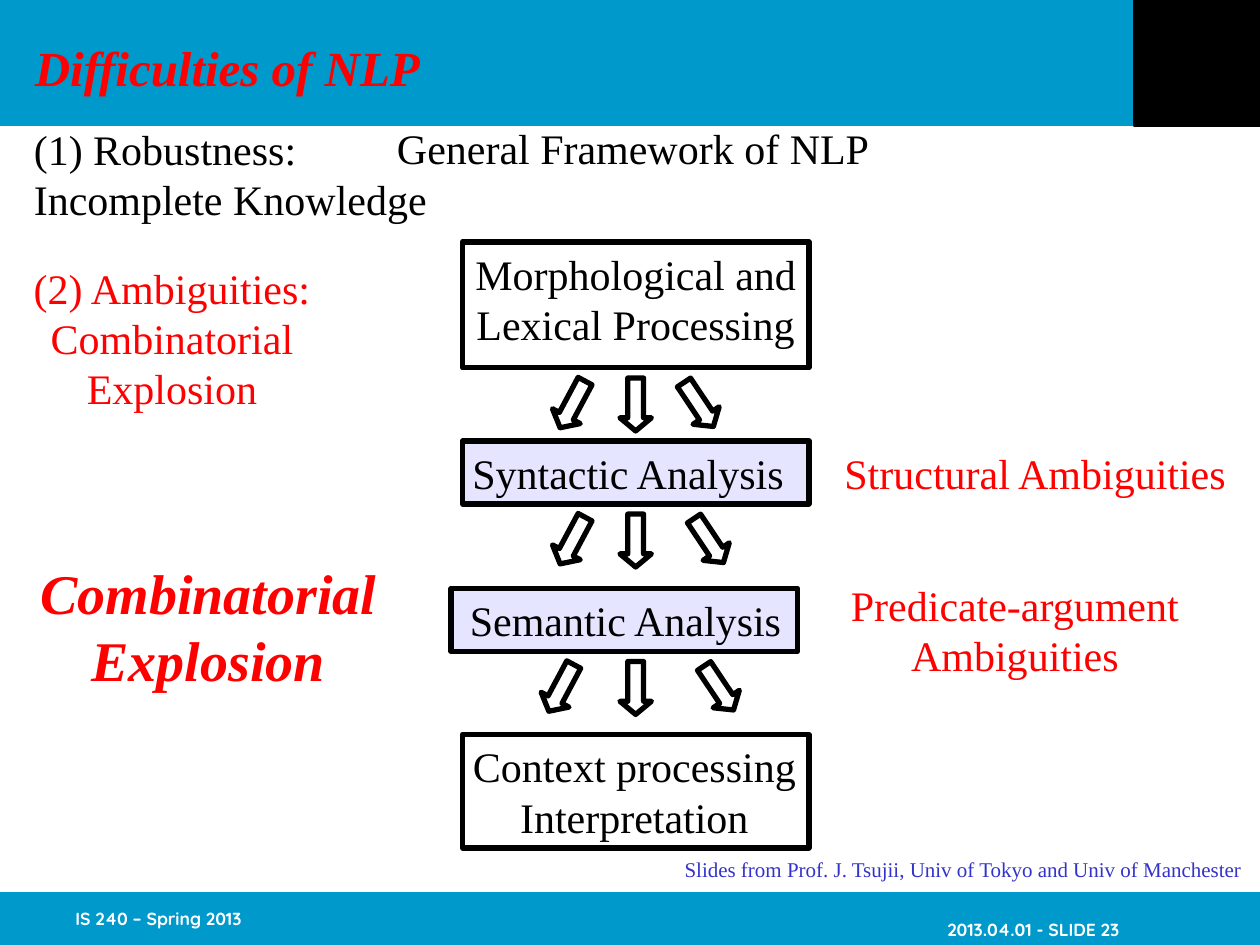
from lxml import etree
from pptx import Presentation
from pptx.dml.color import RGBColor
from pptx.enum import shapes, text
from pptx.oxml import ns
from pptx.util import Inches, Pt

SERIF = "Times New Roman"
SANS = "Quicksand"
RED, BLACK, WHITE, BLUE = "FF0000", "000000", "FFFFFF", "0099CC"
LEFT, MID, RIGHT = text.PP_ALIGN.LEFT, text.PP_ALIGN.CENTER, text.PP_ALIGN.RIGHT
RECT = shapes.MSO_SHAPE.RECTANGLE
ARROW = shapes.MSO_SHAPE.DOWN_ARROW


def rgb(code):
    return RGBColor.from_string(code)


def add_shape(slide, kind, at, fill=None, line=None, width=3, alpha=None):
    """Add a preset shape; alpha is the opacity of its fill in percent."""
    shape = slide.shapes.add_shape(kind, *map(Inches, at))
    shape.shadow.inherit = False
    if fill:
        shape.fill.solid()
        shape.fill.fore_color.rgb = rgb(fill)
    else:
        shape.fill.background()
    if alpha:
        color = shape.fill._xPr.find(".//" + ns.qn("a:srgbClr"))
        etree.SubElement(color, ns.qn("a:alpha"), val=str(alpha * 1000))
    if line:
        shape.line.color.rgb = rgb(line)
        shape.line.width = Pt(width)
    else:
        shape.line.fill.background()
    return shape


def add_text(slide, at, words, color=BLACK, size=24, font=SERIF, align=MID,
             bold=False, italic=False):
    box = slide.shapes.add_textbox(*map(Inches, at))
    frame = box.text_frame
    frame.word_wrap = False
    frame.vertical_anchor = text.MSO_ANCHOR.MIDDLE
    frame.text = words
    for para in frame.paragraphs:
        para.alignment = align
        for run in para.runs:
            run.font.name = font
            run.font.size = Pt(size)
            run.font.color.rgb = rgb(color)
            run.font.bold = bold
            run.font.italic = italic
    return box


def add_arrows(slide, top, lefts):
    """Add a fan of three arrows that point down and outwards."""
    for left, turn in zip(lefts, (28.1, 0, -33.8)):
        arrow = add_shape(slide, ARROW, (left, top, 0.25, 0.42), line=BLACK)
        arrow.adjustments[0] = 0.5
        arrow.adjustments[1] = 0.417
        arrow.rotation = turn


def add_frame(slide):
    """Add the bands at top and bottom with the footer."""
    add_shape(slide, RECT, (0, 0, 10, 1), BLUE)
    add_shape(slide, RECT, (0, 7.08, 10, 0.42), BLUE)
    add_shape(slide, RECT, (9, 0, 1, 1), BLACK, BLACK, 0.75)
    for at, words, align in (
        ((0.5, 7.08, 2.08, 0.42), "IS 240 – Spring 2013", LEFT),
        ((6.9, 7.25, 2.08, 0.25), "2013.04.01 - SLIDE 23", RIGHT),
    ):
        add_text(slide, at, words, WHITE, 10, SANS, align, bold=True)


def add_stages(slide):
    """Add the four boxes of the framework and the arrows between them."""
    tint = {"fill": "CCCCFF", "alpha": 50}
    for left, top, high, look in (
        (3.67, 1.92, 1, {}),
        (3.67, 3.5, 0.5, tint),
        (3.58, 4.67, 0.5, tint),
        (3.67, 5.83, 0.9, {}),
    ):
        add_shape(slide, RECT, (left, top, 2.75, high), line=BLACK, **look)
    for at, words in (
        ((3.67, 1.92, 2.75, 0.9), "Morphological and\nLexical Processing"),
        ((3.64, 3.5, 2.69, 0.5), "Syntactic Analysis"),
        ((3.62, 4.67, 2.69, 0.5), "Semantic Analysis"),
        ((3.65, 5.83, 2.77, 0.9), "Context processing\nInterpretation"),
    ):
        add_text(slide, at, words)
    add_arrows(slide, 3, (4.42, 4.92, 5.42))
    add_arrows(slide, 4.08, (4.42, 4.92, 5.5))
    add_arrows(slide, 5.25, (4.33, 4.92, 5.58))


def add_notes(slide):
    """Add the title and the remarks around the framework."""
    add_text(slide, (0.17, 0.25, 3.27, 0.57), "Difficulties of NLP", RED, 28,
             bold=True, italic=True)
    add_text(slide, (3.05, 0.92, 3.95, 0.5), "General Framework of NLP")
    add_text(slide, (0.17, 0.93, 3.32, 0.9),
             "(1) Robustness:\nIncomplete Knowledge", align=LEFT)
    for at, words in (
        ((0.16, 2.03, 2.41, 1.3), "(2) Ambiguities:\nCombinatorial\nExplosion"),
        ((6.59, 3.5, 3.25, 0.5), "Structural Ambiguities"),
        ((6.61, 4.55, 2.89, 0.9), "Predicate-argument\nAmbiguities"),
    ):
        add_text(slide, at, words, RED)
    add_text(slide, (0.22, 4.38, 2.87, 1.17), "Combinatorial\nExplosion", RED, 32,
             bold=True, italic=True)
    add_text(slide, (5.32, 6.75, 4.65, 0.3),
             "Slides from Prof. J. Tsujii, Univ of Tokyo and Univ of Manchester",
             "3333CC", 12)


def main():
    deck = Presentation()
    deck.slide_width, deck.slide_height = Inches(10), Inches(7.5)
    slide = deck.slides.add_slide(deck.slide_layouts[6])
    add_frame(slide)
    add_stages(slide)
    add_notes(slide)
    deck.save("out.pptx")


if __name__ == "__main__":
    main()
